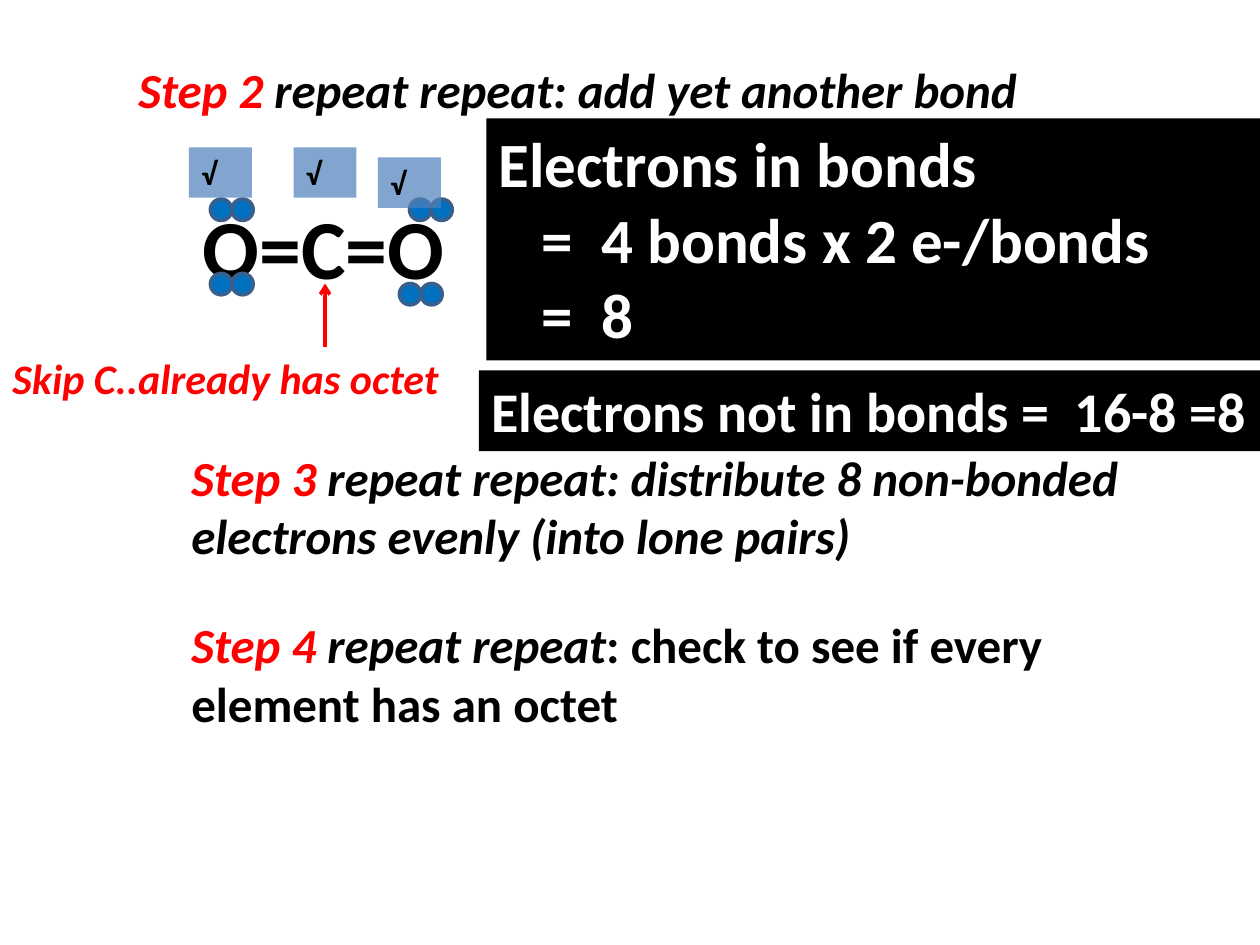
from lxml.etree import SubElement
from pptx import Presentation
from pptx.dml.color import RGBColor
from pptx.enum.shapes import MSO_CONNECTOR, MSO_SHAPE
from pptx.enum.text import MSO_ANCHOR, MSO_AUTO_SIZE, PP_ALIGN
from pptx.oxml.ns import qn
from pptx.util import Inches, Pt

RED, BLACK, WHITE = "FF0000", "000000", "FFFFFF"
BLUE, EDGE, TINT = "0070C0", "3A5F8C", "4F81BD"
DOT = 0.17


def color(code):
    return RGBColor.from_string(code)


def add_run(para, words, size=28, ink=BLACK, italic=False):
    run = para.add_run()
    run.text = words
    font = run.font
    font.name = "Calibri"
    font.size = Pt(size)
    font.bold = True
    font.italic = italic
    font.color.rgb = color(ink)


def add_text(slide, lines, box, fill=None, alpha=None, indents=(), **style):
    area = [Inches(n) for n in box]
    if fill:
        shape = slide.shapes.add_shape(MSO_SHAPE.RECTANGLE, *area)
        shape.shadow.inherit = False
        shape.fill.solid()
        shape.fill.fore_color.rgb = color(fill)
        shape.line.fill.background()
    else:
        shape = slide.shapes.add_textbox(*area)
    if alpha:
        tone = shape.fill._xPr.find(qn("a:solidFill"))[0]
        SubElement(tone, qn("a:alpha"), val=str(alpha * 1000))
    frame = shape.text_frame
    frame.word_wrap = True
    frame.auto_size = MSO_AUTO_SIZE.SHAPE_TO_FIT_TEXT
    frame.vertical_anchor = MSO_ANCHOR.TOP
    for i, runs in enumerate(lines):
        para = frame.paragraphs[0] if i == 0 else frame.add_paragraph()
        para.alignment = PP_ALIGN.LEFT
        if indents:
            para._p.get_or_add_pPr().set("marL", str(Inches(indents[i])))
        for words, extra in runs:
            add_run(para, words, **{**style, **extra})


def add_step(slide, label, runs, box):
    head = (label + " ", {"ink": RED, "italic": True})
    add_text(slide, [[head, *runs]], box)


def add_pair(slide, left, top):
    for x in (left, left + DOT):
        dot = slide.shapes.add_shape(
            MSO_SHAPE.OVAL, Inches(x), Inches(top), Inches(DOT), Inches(DOT))
        dot.shadow.inherit = False
        dot.fill.solid()
        dot.fill.fore_color.rgb = color(BLUE)
        dot.line.color.rgb = color(EDGE)
        dot.line.width = Pt(2)


def add_arrow(slide, x, start, end):
    line = slide.shapes.add_connector(
        MSO_CONNECTOR.STRAIGHT, Inches(x), Inches(start), Inches(x), Inches(end))
    line.line.color.rgb = color(RED)
    line.line.width = Pt(2)
    SubElement(line.line._get_or_add_ln(), qn("a:tailEnd"), type="arrow")
    SubElement(line._element.spPr, qn("a:effectLst"))


def main():
    deck = Presentation()
    deck.slide_width, deck.slide_height = Inches(10), Inches(7.5)
    slide = deck.slides.add_slide(deck.slide_layouts[6])
    slant = {"italic": True}

    add_text(slide, [[("O=C=O", {})]], (1.25, 1.5, 2.75, 0.91),
             indents=[0.26], size=48)
    add_step(slide, "Step 2",
             [("repeat repeat: add yet another bond", slant)],
             (1, 0.42, 8.33, 0.57))
    sums = ["Electrons in bonds", "=  4 bonds x 2 e-/bonds", "=  8"]
    add_text(slide, [[(words, {})] for words in sums],
             (3.86, 0.94, 6.25, 1.92), fill=BLACK,
             indents=[0, 0.34, 0.34], size=36, ink=WHITE)
    add_text(slide, [[("Electrons not in bonds =  16-8 =8", {})]],
             (3.8, 2.94, 6.25, 0.64), fill=BLACK, size=32, ink=WHITE)
    add_step(slide, "Step 3",
             [("repeat repeat: distribute 8 non-bonded electrons evenly "
               "(into lone pairs)", slant)],
             (1.42, 3.5, 7.83, 1.04))
    add_step(slide, "Step 4",
             [("repeat repeat", slant),
              (": check to see if every element has an octet", {})],
             (1.42, 4.83, 8.17, 1.04))
    add_text(slide, [[("Skip C..already has octet", {})]],
             (0, 2.75, 3.83, 0.5), size=24, ink=RED, italic=True)
    add_arrow(slide, 2.58, 2.75, 2.25)

    for left, top in [(1.67, 1.58), (3.25, 1.58), (3.17, 2.25), (1.67, 2.17)]:
        add_pair(slide, left, top)
    for left, top in [(1.5, 1.17), (2.33, 1.17), (3, 1.25)]:
        add_text(slide, [[("√", {})]], (left, top, 0.5, 0.4),
                 fill=TINT, alpha=71, size=18)
    deck.save("out.pptx")


if __name__ == "__main__":
    main()
